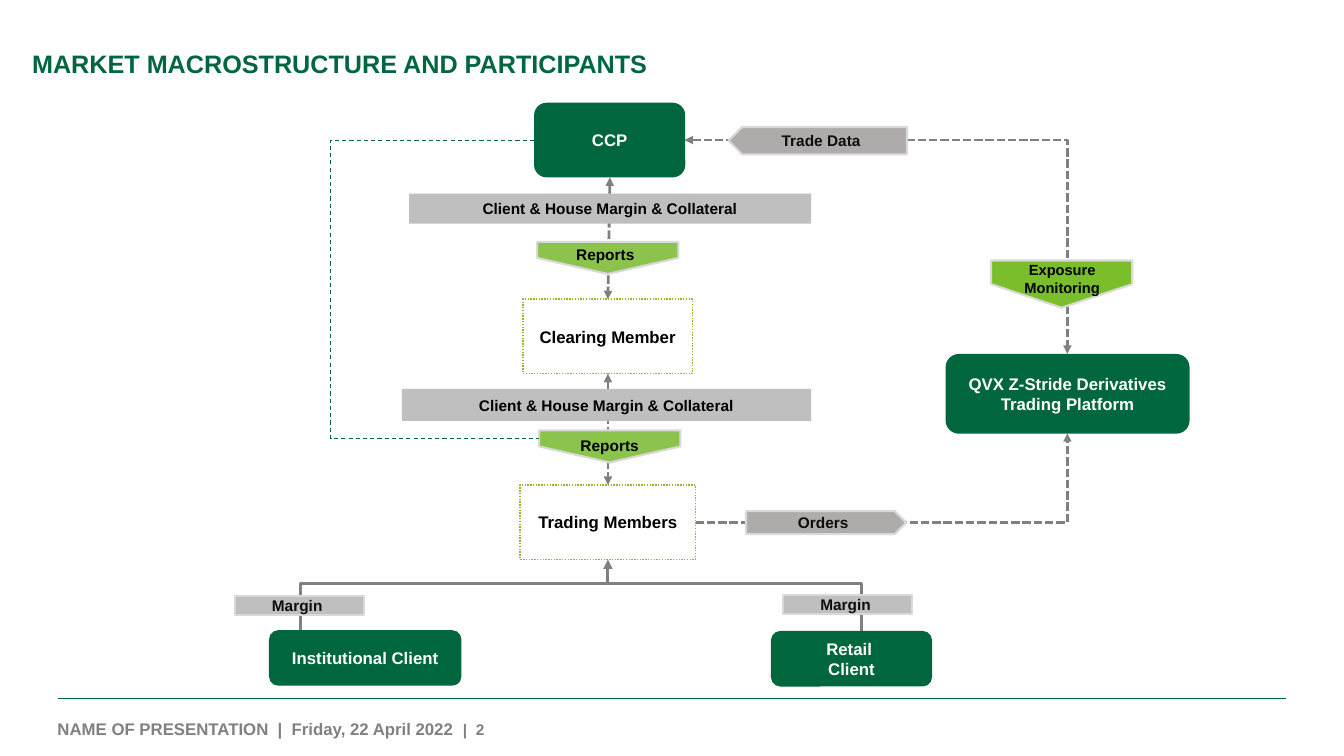
from lxml.etree import SubElement
from pptx import Presentation
from pptx.dml.color import RGBColor as Rgb
from pptx.enum.dml import MSO_LINE as Dash
from pptx.enum.shapes import MSO_CONNECTOR as Link, MSO_SHAPE as Form
from pptx.enum.text import MSO_ANCHOR as Anchor, PP_ALIGN as Align
from pptx.oxml.ns import qn
from pptx.util import Cm, Pt


class Theme:
    font = "Arial"
    green, rule, white, black = "00663E", "00663F", "FFFFFF", "000000"
    ink, grey, edge, olive = "0D0D0D", "808080", "D9D9D9", "A7AC2D"
    bar, tag, lime, leaf = "BFBFBF", "AFABAB", "7ABE2C", "8CC34D"
    title, body, label, small = 18, 12, 11, 10.5


TITLE = "MARKET MACROSTRUCTURE AND PARTICIPANTS"
FOOTER = [("NAME OF PRESENTATION  |  Friday, 22 April 2022  ", Theme.body),
          ("|  2", Theme.label)]
COVER = "Client & House Margin & Collateral"

STYLES = {
    "party": (Form.ROUNDED_RECTANGLE, Theme.green, None, Theme.white, Theme.body),
    "member": (Form.RECTANGLE, Theme.white, (Theme.olive, 1, Dash.ROUND_DOT),
               Theme.black, Theme.body),
    "margin": (Form.RECTANGLE, Theme.bar, (Theme.edge, 1.5, None), Theme.ink, Theme.label),
    "cover": (Form.RECTANGLE, Theme.bar, None, Theme.black, Theme.label),
    "flow": (Form.PENTAGON, Theme.tag, (Theme.edge, 1.5, None), Theme.ink, Theme.label),
}
BOXES = [
    ("party", "CCP", (13.46, 2.59, 3.81, 1.88)),
    ("member", "Clearing Member", (13.18, 7.54, 4.27, 1.88)),
    ("member", "Trading Members", (13.11, 12.22, 4.42, 1.88)),
    ("party", "Institutional Client", (6.78, 15.88, 4.85, 1.4)),
    ("party", "Retail \nClient", (19.43, 15.9, 4.06, 1.4)),
    ("margin", "Margin ", (19.74, 14.99, 3.25, 0.48)),
    ("margin", "Margin ", (5.92, 15.01, 3.25, 0.48)),
    ("cover", COVER, (10.31, 4.88, 10.13, 0.76)),
    ("cover", COVER, (10.13, 9.8, 10.31, 0.81)),
    ("party", "QVX Z-Stride Derivatives Trading Platform", (23.83, 8.92, 6.15, 2.01)),
    ("flow", "Orders", (18.8, 12.88, 4.04, 0.58)),
    ("flow", "Trade Data", (18.36, 3.2, 4.5, 0.69)),
]
LEFTWARD = "Trade Data"
SIGNS = [
    ("Exposure Monitoring", Theme.lime, (26.16, 5.38, 1.19, 3.56),
     (24.89, 6.45, 3.76, 1.32), Theme.small, Align.CENTER),
    ("Reports", Theme.leaf, (14.91, 4.72, 0.81, 3.56),
     (14.27, 6.05, 2.9, 0.81), Theme.label, Align.LEFT),
    ("Reports", Theme.leaf, (14.96, 9.47, 0.81, 3.56),
     (14.38, 10.87, 2.9, 0.81), Theme.label, Align.LEFT),
]
FLOWS = [
    ((17.53, 13.16, 26.9, 10.92), True, ("tailEnd",)),
    ((17.25, 3.53, 26.9, 8.92), True, ("headEnd", "tailEnd")),
    ((15.37, 4.47, 15.32, 7.54), False, ("headEnd", "tailEnd")),
    ((15.32, 9.42, 15.32, 12.22), False, ("headEnd", "tailEnd")),
]
BRACKET = (13.94, 8.33, 1.4, 14.15)
RISE = (15.32, 14.68, 15.32, 14.1)
LOOP = (13.46, 3.53, 13.59, 11.05)
LOOP_LEFT = 8.33

deck = Presentation()
deck.slide_width, deck.slide_height = Cm(33.87), Cm(19.05)
slide = deck.slides.add_slide(deck.slide_layouts[6])
shapes = slide.shapes


def style(run, size, color):
    run.font.name, run.font.size, run.font.bold = Theme.font, Pt(size), True
    run.font.color.rgb = Rgb.from_string(color)


def write(frame, text, size, color, align):
    frame.word_wrap = True
    frame.text = text
    for para in frame.paragraphs:
        para.alignment = align
        for run in para.runs:
            style(run, size, color)


def stroke(line, color, width, dash=None):
    line.color.rgb = Rgb.from_string(color)
    line.width = Pt(width)
    if dash:
        line.dash_style = dash


def block(form, place, fill=None, line=None):
    shape = shapes.add_shape(form, *map(Cm, place))
    shape.shadow.inherit = False
    if fill:
        shape.fill.solid()
        shape.fill.fore_color.rgb = Rgb.from_string(fill)
    else:
        shape.fill.background()
    if line:
        stroke(shape.line, *line)
    else:
        shape.line.fill.background()
    return shape


def note(place):
    return shapes.add_textbox(*map(Cm, place)).text_frame


def wire(kind, ends, line, tips=()):
    link = shapes.add_connector(kind, *map(Cm, ends))
    stroke(link.line, *line)
    props = link._element.spPr
    for tip in tips:
        SubElement(props.find(qn("a:ln")), qn("a:" + tip), type="triangle")
    SubElement(props, qn("a:effectLst"))
    return link


foot = note((1.45, 17.96, 20.83, 0.79))
foot.margin_left = foot.margin_right = foot.margin_top = foot.margin_bottom = 0
foot.vertical_anchor = Anchor.MIDDLE
for text, size in FOOTER:
    run = foot.paragraphs[0].add_run()
    run.text = text
    style(run, size, Theme.grey)
wire(Link.STRAIGHT, (1.45, 17.6, 32.41, 17.6), (Theme.rule, 1))

head = note((0.56, 1.17, 22.94, 1.68))
write(head, TITLE, Theme.title, Theme.rule, Align.LEFT)
head.paragraphs[0].line_spacing = 0.9

for ends, bent, tips in FLOWS:
    link = wire(Link.ELBOW if bent else Link.STRAIGHT, ends,
                (Theme.grey, 2, Dash.SQUARE_DOT), tips)
    if bent:
        link._element.spPr.find(qn("a:prstGeom")).set("prst", "bentConnector2")

fork = block(Form.LEFT_BRACKET, BRACKET, line=(Theme.grey, 2.25))
fork.rotation = 90
fork.adjustments[0] = 0

for kind, text, place in BOXES:
    form, fill, line, color, size = STYLES[kind]
    box = block(form, place, fill, line)
    box.text_frame.vertical_anchor = Anchor.MIDDLE
    write(box.text_frame, text, size, color, Align.CENTER)
    if text == LEFTWARD:
        box._element.spPr.find(qn("a:xfrm")).set("flipH", "1")

wire(Link.STRAIGHT, RISE, (Theme.grey, 2.25), ("tailEnd",))

for text, fill, place, area, size, align in SIGNS:
    block(Form.PENTAGON, place, fill, (Theme.edge, 1.5)).rotation = 90
    write(note(area), text, size, Theme.black, align)

loop = wire(Link.ELBOW, LOOP, (Theme.rule, 0.75, Dash.DASH))
bend = round((LOOP_LEFT - LOOP[0]) / (LOOP[2] - LOOP[0]) * 100000)
guides = loop._element.spPr.find(qn("a:prstGeom")).find(qn("a:avLst"))
SubElement(guides, qn("a:gd"), name="adj1", fmla=f"val {bend}")

deck.save("out.pptx")
